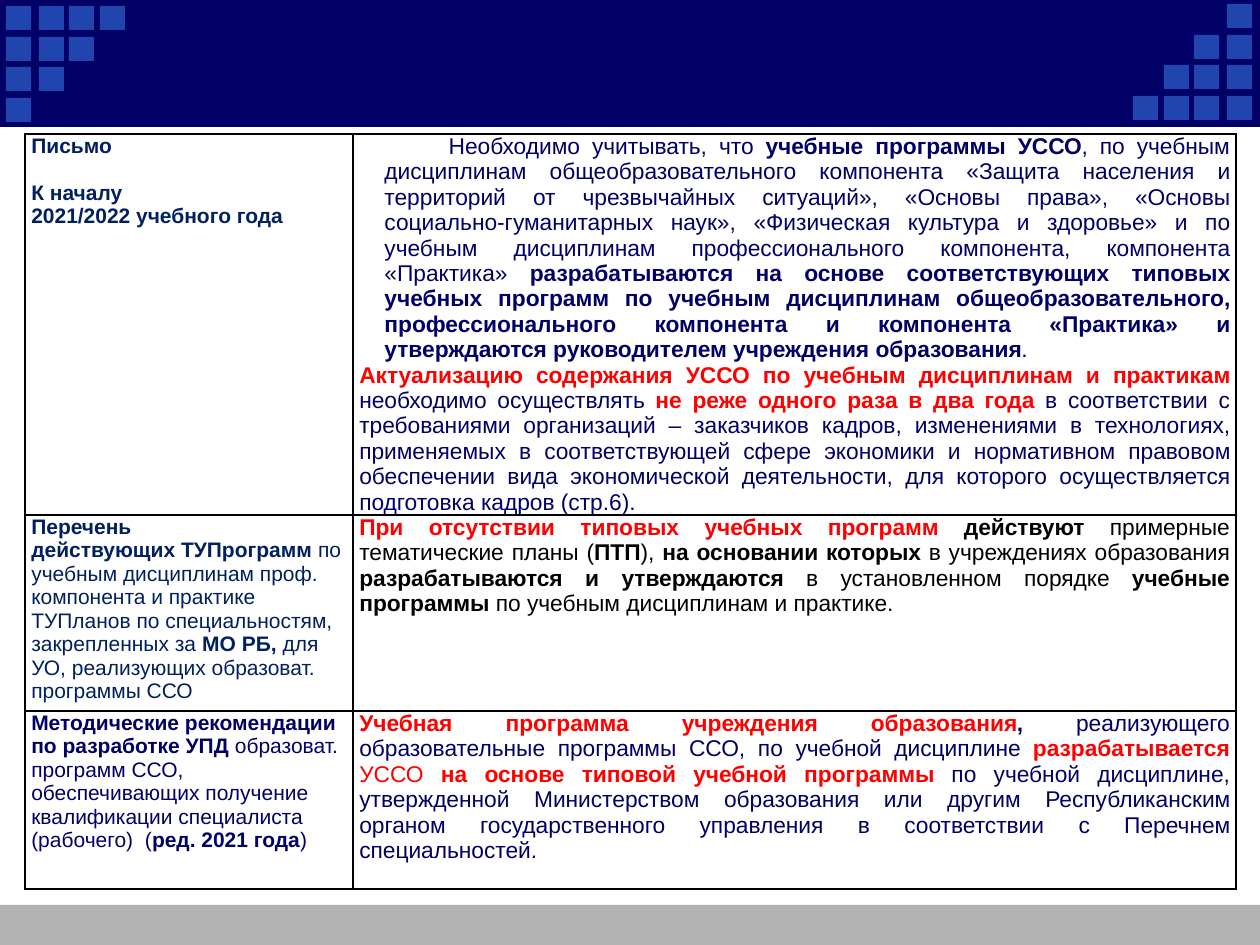
from lxml import etree
from pptx import Presentation
from pptx.dml.color import RGBColor
from pptx.enum import shapes, text
from pptx.oxml.ns import qn
from pptx import util as u

PX = 914400 / 126
HUES = {
    "navy": "000066", "deep": "002060", "red": "FF0000", "black": "000000",
    "tile": "2045AE", "grey": "B2B2B2",
}
LEFT, JUST = text.PP_ALIGN.LEFT, text.PP_ALIGN.JUSTIFY

# Each paragraph is a list of runs: (colour, bold, text)
LETTER = [
    [("deep", True, "Письмо")],
    [("deep", True, "К началу")],
    [("deep", True, "2021/2022 учебного года")],
]
RULES = [
    [("navy", False, "Необходимо учитывать, что "),
     ("navy", True, "учебные программы УССО"),
     ("navy", False, ", по учебным дисциплинам общеобразовательного компонента "
      "«Защита населения и территорий от чрезвычайных ситуаций», «Основы права», "
      "«Основы социально-гуманитарных наук», «Физическая культура и здоровье» и по "
      "учебным дисциплинам профессионального компонента, компонента «Практика» "),
     ("navy", True, "разрабатываются на основе соответствующих типовых учебных программ "
      "по учебным дисциплинам общеобразовательного, профессионального компонента и "
      "компонента «Практика» и утверждаются руководителем учреждения образования"),
     ("navy", False, ".")],
    [("red", True, "Актуализацию содержания УССО по учебным дисциплинам и практикам "),
     ("navy", False, "необходимо осуществлять "),
     ("red", True, "не реже одного раза в два года "),
     ("navy", False, "в соответствии с требованиями организаций – заказчиков кадров, "
      "изменениями в технологиях, применяемых в соответствующей сфере экономики и "
      "нормативном правовом обеспечении вида экономической деятельности, для которого "
      "осуществляется подготовка кадров (стр.6).")],
]
LIST = [
    [("deep", True, "Перечень")],
    [("deep", True, "действующих ТУПрограмм"),
     ("deep", False, " по учебным дисциплинам проф. компонента и практике ТУПланов "
      "по специальностям, закрепленных за "),
     ("deep", True, "МО РБ,"),
     ("deep", False, " для УО, реализующих образоват. программы ССО")],
]
PLANS = [
    [("red", True, "При отсутствии типовых учебных программ "),
     ("black", True, "действуют "),
     ("black", False, "примерные тематические планы ("),
     ("black", True, "ПТП"),
     ("black", False, "), "),
     ("black", True, "на основании которых"),
     ("black", False, " в учреждениях образования "),
     ("black", True, "разрабатываются и утверждаются"),
     ("black", False, " в установленном порядке "),
     ("black", True, "учебные программы"),
     ("black", False, " по учебным дисциплинам и практике.")],
]
ADVICE = [
    [("navy", True, "Методические рекомендации по разработке УПД "),
     ("navy", False, "образоват. программ ССО, обеспечивающих получение квалификации "
      "специалиста (рабочего)  ("),
     ("navy", True, "ред. 2021 года"),
     ("navy", False, ")")],
]
COURSE = [
    [("red", True, "Учебная программа учреждения образования"),
     ("navy", True, ", "),
     ("navy", False, "реализующего образовательные программы ССО, по учебной дисциплине "),
     ("red", True, "разрабатывается "),
     ("red", False, "УССО "),
     ("red", True, "на основе типовой учебной программы "),
     ("navy", False, "по учебной дисциплине, утвержденной Министерством образования или "
      "другим Республиканским органом государственного управления в соответствии с "
      "Перечнем специальностей.")],
]
ROWS = [(355, LETTER, RULES), (196, LIST, PLANS), (178, ADVICE, COURSE)]
COLS = [(328, 12, LEFT), (883, 13, JUST)]


def px(n):
    return u.Emu(round(n * PX))


def hue(name):
    return RGBColor.from_string(HUES[name])


def box(slide, x, y, w, h, fill):
    rect = slide.shapes.add_shape(
        shapes.MSO_SHAPE.RECTANGLE, px(x), px(y), px(w), px(h))
    rect.shadow.inherit = False
    rect.fill.solid()
    rect.fill.fore_color.rgb = hue(fill)
    rect.line.fill.background()
    return rect


def tiles(slide):
    """Stepped corner squares, the right set turned half round."""
    xs, ys = (6, 39, 69, 100), (6, 37, 67, 98)
    for r, y in enumerate(ys):
        for x in xs[:4 - r]:
            box(slide, x, y, 25, 24, "tile")
            box(slide, 1233 - x, 102 - y, 25, 24, "tile")


def edge(cell):
    """Thin black border on all four sides."""
    props = cell._tc.get_or_add_tcPr()
    for i, side in enumerate(("lnL", "lnR", "lnT", "lnB")):
        line = etree.Element(qn("a:" + side), w=str(u.Pt(1)))
        fill = etree.SubElement(line, qn("a:solidFill"))
        etree.SubElement(fill, qn("a:srgbClr"), val=HUES["black"])
        props.insert(i, line)


def write(cell, paras, size, align):
    cell.margin_left = cell.margin_right = u.Inches(0.05)
    cell.margin_top = cell.margin_bottom = 0
    cell.fill.background()
    edge(cell)
    frame = cell.text_frame
    for i, runs in enumerate(paras):
        para = frame.add_paragraph() if i else frame.paragraphs[0]
        para.alignment = align
        para.font.name, para.font.size = "Arial", u.Pt(size)
        for name, bold, words in runs:
            run = para.add_run()
            run.text = words
            run.font.name, run.font.size = "Arial", u.Pt(size)
            run.font.bold = bold
            run.font.color.rgb = hue(name)


def grid(slide):
    wide, high = sum(c[0] for c in COLS), sum(r[0] for r in ROWS)
    table = slide.shapes.add_table(
        len(ROWS), len(COLS), px(25), px(134), px(wide), px(high)).table
    table.first_row = table.horz_banding = False
    for c, (width, size, align) in enumerate(COLS):
        table.columns[c].width = px(width)
        for r, row in enumerate(ROWS):
            table.rows[r].height = px(row[0])
            write(table.cell(r, c), row[c + 1], size, align)

    # Gap after the first heading, indent of the first long paragraph
    table.cell(0, 0).text_frame.paragraphs[0].space_after = u.Pt(13.5)
    props = table.cell(0, 1).text_frame.paragraphs[0]._p.get_or_add_pPr()
    props.set("marL", str(u.Inches(0.2)))
    props.set("indent", str(u.Inches(0.51)))


def main():
    deck = Presentation()
    deck.slide_width, deck.slide_height = px(1260), px(945)
    slide = deck.slides.add_slide(deck.slide_layouts[6])

    # Bands at foot and head
    box(slide, 0, 905, 1260, 40, "grey")
    head = box(slide, 0, 0, 1260, 126, "navy")
    head.line.color.rgb = hue("navy")
    head.line.width = u.Pt(0.75)

    tiles(slide)
    grid(slide)
    deck.save("out.pptx")


if __name__ == "__main__":
    main()
